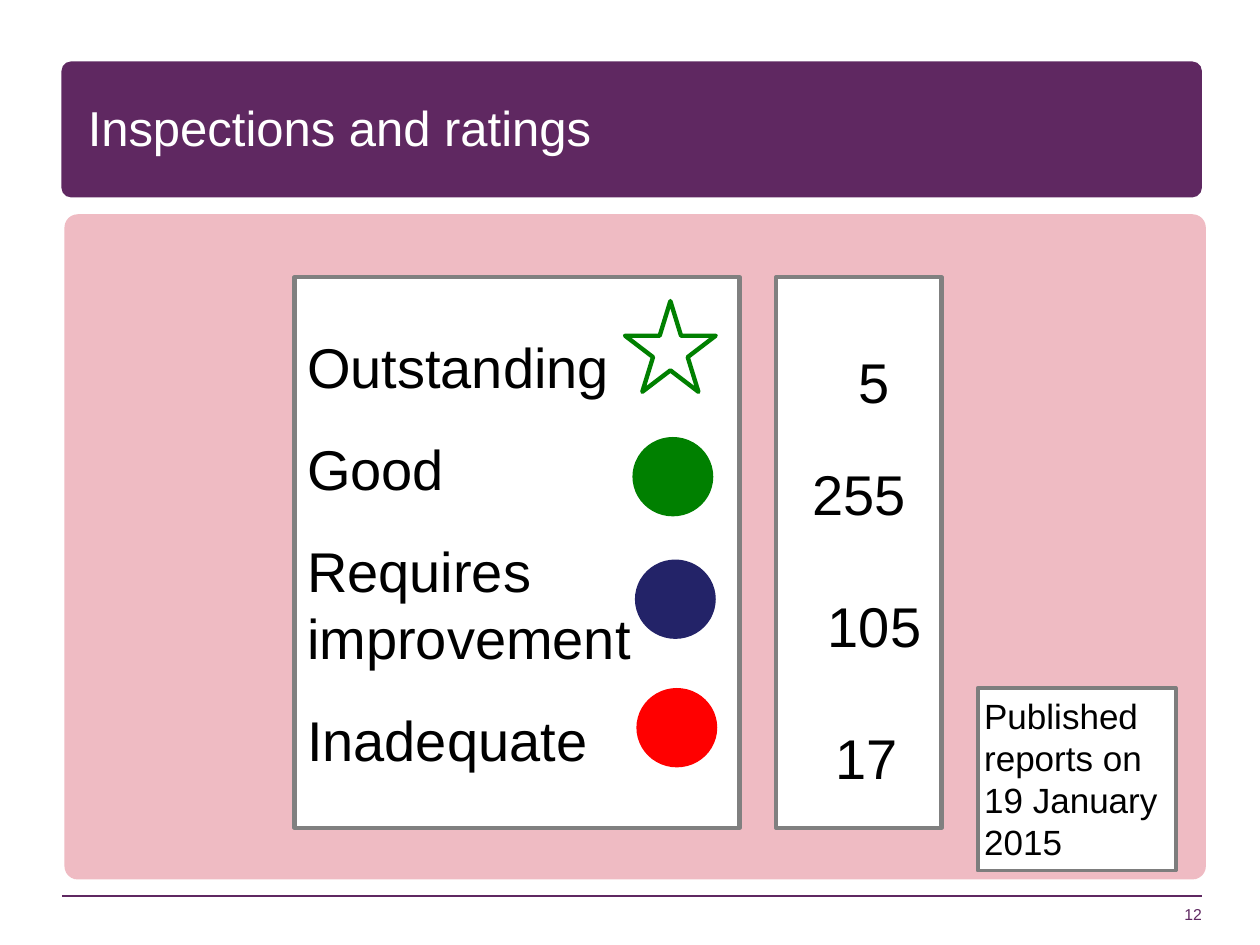
from dataclasses import dataclass

from lxml.etree import SubElement
from pptx import Presentation
from pptx.dml.color import RGBColor
from pptx.enum.shapes import MSO_CONNECTOR, MSO_SHAPE
from pptx.enum.text import MSO_ANCHOR, PP_ALIGN
from pptx.oxml.ns import qn
from pptx.util import Cm, Pt


@dataclass(frozen=True)
class Theme:
    font: str = "Arial"
    purple: str = "5F2861"
    pink: str = "EFBBC3"
    white: str = "FFFFFF"
    black: str = "000000"
    grey: str = "808080"
    note_grey: str = "7D7D7D"
    green: str = "008000"
    navy: str = "232368"
    red: str = "FF0000"
    title_size: int = 28
    rating_size: int = 32
    note_size: int = 20
    number_size: int = 9


THEME = Theme()


def set_values(target, values):
    for attribute, value in values.items():
        setattr(target, attribute, value)


def set_line(line, color, width):
    line.color.rgb = RGBColor.from_string(color)
    line.width = Pt(width)


def add_panel(slide, preset, box, fill=None, line=None, corner=None):
    """Add a preset shape; line is a (colour, points) pair."""
    panel = slide.shapes.add_shape(preset, *map(Cm, box))
    panel.shadow.inherit = False
    if corner is not None:
        panel.adjustments[0] = corner
    if fill:
        panel.fill.solid()
        panel.fill.fore_color.rgb = RGBColor.from_string(fill)
    else:
        panel.fill.background()
    if line:
        set_line(panel.line, *line)
    else:
        panel.line.fill.background()
    return panel


def add_rule(slide, start, end, color, width):
    rule = slide.shapes.add_connector(
        MSO_CONNECTOR.STRAIGHT, *map(Cm, start + end))
    set_line(rule.line, color, width)
    SubElement(rule._element.spPr, qn("a:effectLst"))


def write(holder, lines, size, color, frame=None, formats=None, inset=None):
    """Fill a shape with one paragraph per line; formats has a dict for each."""
    text = holder.text_frame
    set_values(text, {"word_wrap": True, "vertical_anchor": MSO_ANCHOR.TOP,
                      **(frame or {})})
    if inset is not None:
        set_values(text, {f"margin_{side}": Cm(inset)
                          for side in ("left", "top", "right", "bottom")})
    formats = formats or [{}] * len(lines)
    for index, (line, values) in enumerate(zip(lines, formats)):
        paragraph = text.add_paragraph() if index else text.paragraphs[0]
        run = paragraph.add_run()
        run.text = line
        set_values(paragraph, {"alignment": PP_ALIGN.LEFT, **values})
        set_values(run.font, {"name": THEME.font, "size": Pt(size)})
        run.font.color.rgb = RGBColor.from_string(color)


def add_label(slide, box, label, size, color, **options):
    write(slide.shapes.add_textbox(*map(Cm, box)), [label], size, color, **options)


def add_ratings(slide):
    top, height = 5.59, 11.1
    border = (THEME.grey, 2.5)
    middle = {"vertical_anchor": MSO_ANCHOR.MIDDLE}

    # Rating names
    names = ["Outstanding", "Good", "Requires improvement", "Inadequate"]
    names_panel = add_panel(slide, MSO_SHAPE.RECTANGLE,
                            (5.94, top, 8.97, height), THEME.white, border)
    write(names_panel, names, THEME.rating_size, THEME.black, middle,
          [{"space_after": Pt(20)}] * len(names))

    # Rating symbols
    for left, symbol_top, color in ((12.75, 8.81, THEME.green),
                                    (12.8, 11.28, THEME.navy),
                                    (12.83, 13.87, THEME.red)):
        add_panel(slide, MSO_SHAPE.OVAL, (left, symbol_top, 1.63, 1.6), color)
    add_panel(slide, MSO_SHAPE.STAR_5_POINT, (12.6, 6.07, 1.83, 1.83),
              line=(THEME.green, 2.5))

    # Number of services with each rating
    counts = ["5", "255", "105", "17"]
    centred = {"alignment": PP_ALIGN.CENTER, "line_spacing": 1.5}
    spaced = {**centred, "space_after": Pt(18)}
    counts_panel = add_panel(slide, MSO_SHAPE.RECTANGLE,
                             (15.65, top, 3.33, height), THEME.white, border)
    write(counts_panel, counts, THEME.rating_size, THEME.black, middle,
          [centred, {**spaced, "space_before": Pt(6)}, spaced, spaced])
    indents = (0.63, 0, 0.63, 0.31)
    for paragraph, indent in zip(counts_panel.text_frame.paragraphs, indents):
        paragraph._p.get_or_add_pPr().set("marL", str(Cm(indent)))


def main():
    deck = Presentation()
    set_values(deck, {"slide_width": Cm(25.4), "slide_height": Cm(19.05)})
    slide = deck.slides.add_slide(deck.slide_layouts[6])

    # Title band, footer rule and body
    add_panel(slide, MSO_SHAPE.ROUNDED_RECTANGLE, (1.24, 1.24, 22.99, 2.74),
              THEME.purple, corner=0.07)
    add_rule(slide, (24.23, 18.06), (1.24, 18.06), THEME.purple, 1)
    add_panel(slide, MSO_SHAPE.ROUNDED_RECTANGLE, (1.3, 4.32, 23.01, 13.41),
              THEME.pink, corner=0.02)

    # Slide number and title
    add_label(slide, (18.95, 17.35, 5.28, 1.27), "12", THEME.number_size,
              THEME.purple, frame={"vertical_anchor": MSO_ANCHOR.BOTTOM},
              formats=[{"alignment": PP_ALIGN.RIGHT}], inset=0)
    add_label(slide, (1.52, 1.85, 16.21, 1.78), "Inspections and ratings",
              THEME.title_size, THEME.white)

    add_ratings(slide)

    # Publication note
    note = add_panel(slide, MSO_SHAPE.RECTANGLE, (19.71, 13.87, 3.99, 3.68),
                     THEME.white, (THEME.note_grey, 2.25))
    write(note, ["Published", "reports on", "19 January", "2015"],
          THEME.note_size, THEME.black, inset=0.13)

    deck.save("out.pptx")


if __name__ == "__main__":
    main()
